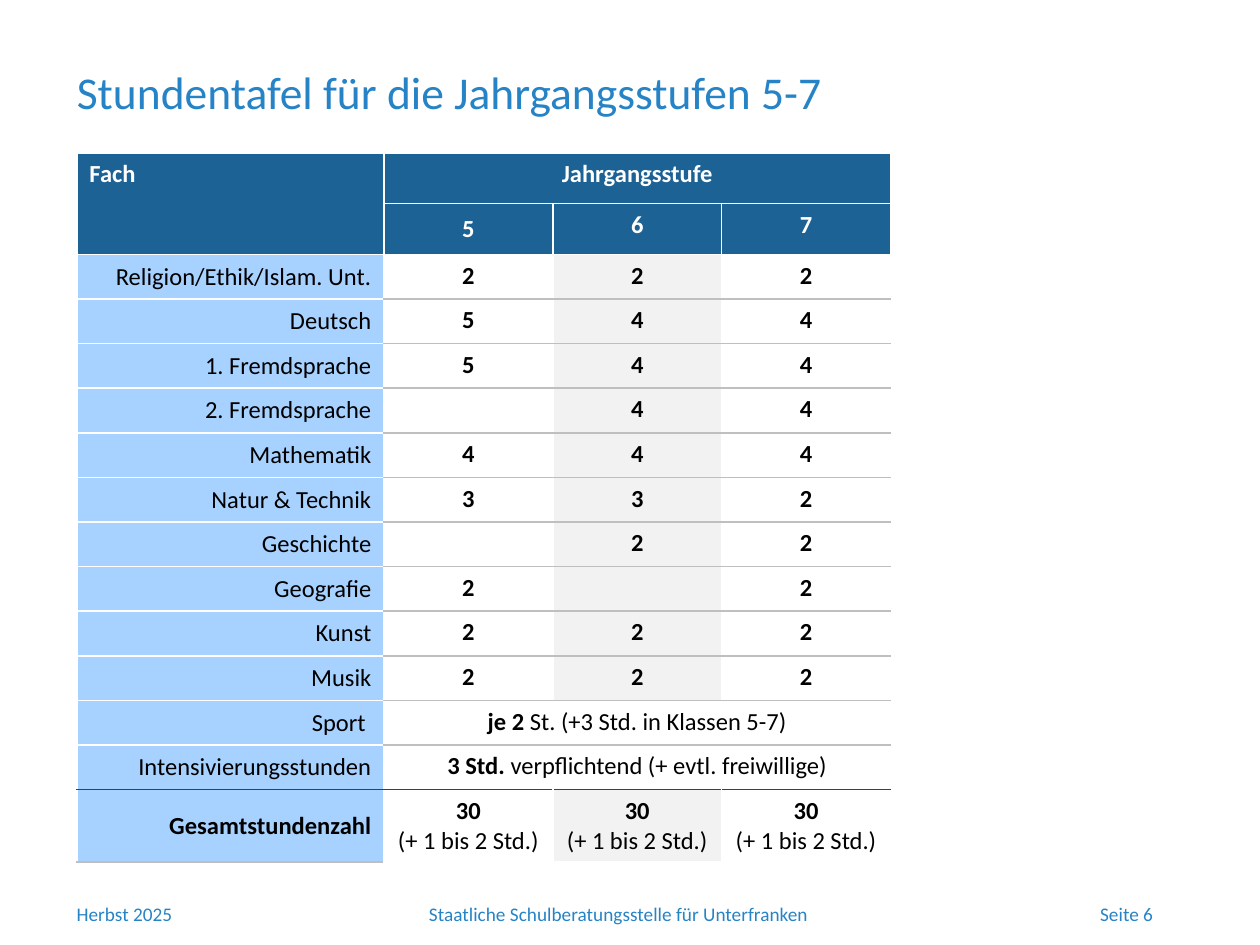
from lxml.etree import SubElement
from pptx import Presentation
from pptx.dml.color import RGBColor
from pptx.enum.text import MSO_ANCHOR, MSO_AUTO_SIZE, PP_ALIGN
from pptx.oxml.ns import qn
from pptx.util import Pt

BLUE = RGBColor(0x26, 0x83, 0xC6)
DARK_BLUE = RGBColor(0x1D, 0x62, 0x94)
LIGHT_BLUE = RGBColor(0xA7, 0xD1, 0xFE)
WHITE = RGBColor(0xFF, 0xFF, 0xFF)
BLACK = RGBColor(0x00, 0x00, 0x00)
PALE_GREY = RGBColor(0xF2, 0xF2, 0xF2)
GREY = RGBColor(0xBF, 0xBF, 0xBF)
DARK_GREY = RGBColor(0x40, 0x40, 0x40)
LEFT, CENTER, RIGHT = PP_ALIGN.LEFT, PP_ALIGN.CENTER, PP_ALIGN.RIGHT

SUBJECTS = [
    ("Religion/Ethik/Islam. Unt.", "222"),
    ("Deutsch", "544"),
    ("1. Fremdsprache", "544"),
    ("2. Fremdsprache", " 44"),
    ("Mathematik", "444"),
    ("Natur & Technik", "332"),
    ("Geschichte", " 22"),
    ("Geografie", "2 2"),
    ("Kunst", "222"),
    ("Musik", "222"),
]
JOINT = [
    ("Sport ", "je 2", " St. (+3 Std. in Klassen 5-7)"),
    ("Intensivierungsstunden", "3 Std.", " verpflichtend (+ evtl. freiwillige)"),
]
COLUMN_FILLS = [WHITE, PALE_GREY, WHITE]


class SlideBuilder:
    """Holds the slide and its text style."""

    font = "Calibri"

    def __init__(self, s):
        self.s = s

    def style(self, p, size, color, align, bold=None):
        p.alignment = align
        f = p.font
        f.name, f.size, f.bold = self.font, Pt(size), bold
        f.color.rgb = color

    def title(self, text, x, y, w, h):
        sp = self.s.shapes.title
        sp.left, sp.top, sp.width, sp.height = Pt(x), Pt(y), Pt(w), Pt(h)
        tf = sp.text_frame
        tf.text = text
        tf.auto_size = MSO_AUTO_SIZE.NONE
        tf.vertical_anchor = MSO_ANCHOR.MIDDLE
        p = tf.paragraphs[0]
        p.line_spacing = 0.9
        self.style(p, 26, BLUE, LEFT)

    def footer(self, text, x, w, align):
        tf = self.s.shapes.add_textbox(Pt(x), Pt(512), Pt(w), Pt(20.6)).text_frame
        tf.word_wrap = True
        tf.text = text
        self.style(tf.paragraphs[0], 11, BLUE, align)

    def table(self, x, y, widths, heights):
        frame = self.s.shapes.add_table(len(heights), len(widths), Pt(x), Pt(y),
                                        Pt(sum(widths)), Pt(sum(heights)))
        table = frame.table
        table.first_row = table.horz_banding = False
        for column, w in zip(table.columns, widths):
            column.width = Pt(w)
        for row, h in zip(table.rows, heights):
            row.height = Pt(h)
        return table

    def cell(self, cell, fill, parts=(), color=BLACK, align=CENTER, middle=False):
        """Fill a cell; parts are (text, bold) runs, with a newline as break."""
        cell.fill.solid()
        cell.fill.fore_color.rgb = fill
        if middle:
            cell.vertical_anchor = MSO_ANCHOR.MIDDLE
        p = cell.text_frame.paragraphs[0]
        bold = parts[0][1] if len(parts) == 1 else None
        self.style(p, 14, color, align, bold)
        for text, is_bold in parts:
            r = p.add_run()
            r.text = text.rstrip("\n")
            if bold is None:
                r.font.bold = is_bold
            if text.endswith("\n"):
                p.add_line_break()
        if not parts:
            SubElement(p._p, qn("a:endParaRPr"), sz="1400")

    def borders(self, cell, top=WHITE, bottom=WHITE):
        tc_pr = cell._tc.get_or_add_tcPr()
        sides = [("a:lnL", WHITE), ("a:lnR", WHITE), ("a:lnT", top), ("a:lnB", bottom)]
        for i, (tag, color) in enumerate(sides):
            width = Pt(0.75 if color == DARK_GREY else 1)
            ln = SubElement(tc_pr, qn(tag), w=str(width))
            SubElement(SubElement(ln, qn("a:solidFill")), qn("a:srgbClr"), val=str(color))
            tc_pr.insert(i, ln)


def timetable(b):
    t = b.table(43.9, 87.4, [175.5] + [96.5] * 3, [29] * 2 + [25.5] * 12 + [41.4])
    last = len(t.rows) - 1

    # Header rows
    header = {
        (0, 0): ("Fach", LEFT), (0, 1): ("Jahrgangsstufe", CENTER),
        (1, 1): ("5", CENTER), (1, 2): ("6", CENTER), (1, 3): ("7", CENTER),
    }
    for row in range(2):
        for col in range(4):
            text, align = header.get((row, col), ("", CENTER))
            b.cell(t.cell(row, col), DARK_BLUE, [(text, True)] if text else (),
                   WHITE, align, middle=text == "5")

    # Subject names
    names = [name for name, *_ in SUBJECTS + JOINT] + ["Gesamtstundenzahl"]
    for row, name in enumerate(names, 2):
        b.cell(t.cell(row, 0), LIGHT_BLUE, [(name, row == last)], align=RIGHT, middle=True)

    # Hours per year
    for row, (_, hours) in enumerate(SUBJECTS, 2):
        for col, (hour, fill) in enumerate(zip(hours, COLUMN_FILLS), 1):
            b.cell(t.cell(row, col), fill, [(hour, True)] if hour != " " else ())

    # Hours shared by all years
    for row, (_, strong, plain) in enumerate(JOINT, 2 + len(SUBJECTS)):
        b.cell(t.cell(row, 1), WHITE, [(strong, True), (plain, False)])
        for col in (2, 3):
            b.cell(t.cell(row, col), WHITE)
        t.cell(row, 1).merge(t.cell(row, 3))

    # Totals
    for col, fill in enumerate(COLUMN_FILLS, 1):
        b.cell(t.cell(last, col), fill, [("30\n", True), ("(+ 1 bis 2 Std.)", False)])

    # Rules between the rows
    for row in range(last + 1):
        for col in range(4):
            inner = GREY if col else WHITE
            top = DARK_GREY if row == last else inner if row > 2 else WHITE
            bottom = DARK_GREY if row == last - 1 else inner if row > 1 else WHITE
            if row == last:
                bottom = WHITE if col else GREY
            b.borders(t.cell(row, col), top, bottom)
    t.cell(0, 0).merge(t.cell(1, 0))
    t.cell(0, 1).merge(t.cell(0, 3))


def main():
    prs = Presentation()
    prs.slide_width, prs.slide_height = Pt(720), Pt(540)
    b = SlideBuilder(prs.slides.add_slide(prs.slide_layouts[5]))

    # Footer
    b.footer("Staatliche Schulberatungsstelle für Unterfranken", 209.5, 288, CENTER)
    b.footer("Herbst 2025", 36.7, 185.8, LEFT)
    b.footer("Seite 6", 567.4, 98.6, RIGHT)

    # Title and table
    b.title("Stundentafel für die Jahrgangsstufen 5-7", 36.7, 20.9, 503.3, 66.2)
    timetable(b)
    prs.save("out.pptx")


if __name__ == "__main__":
    main()
